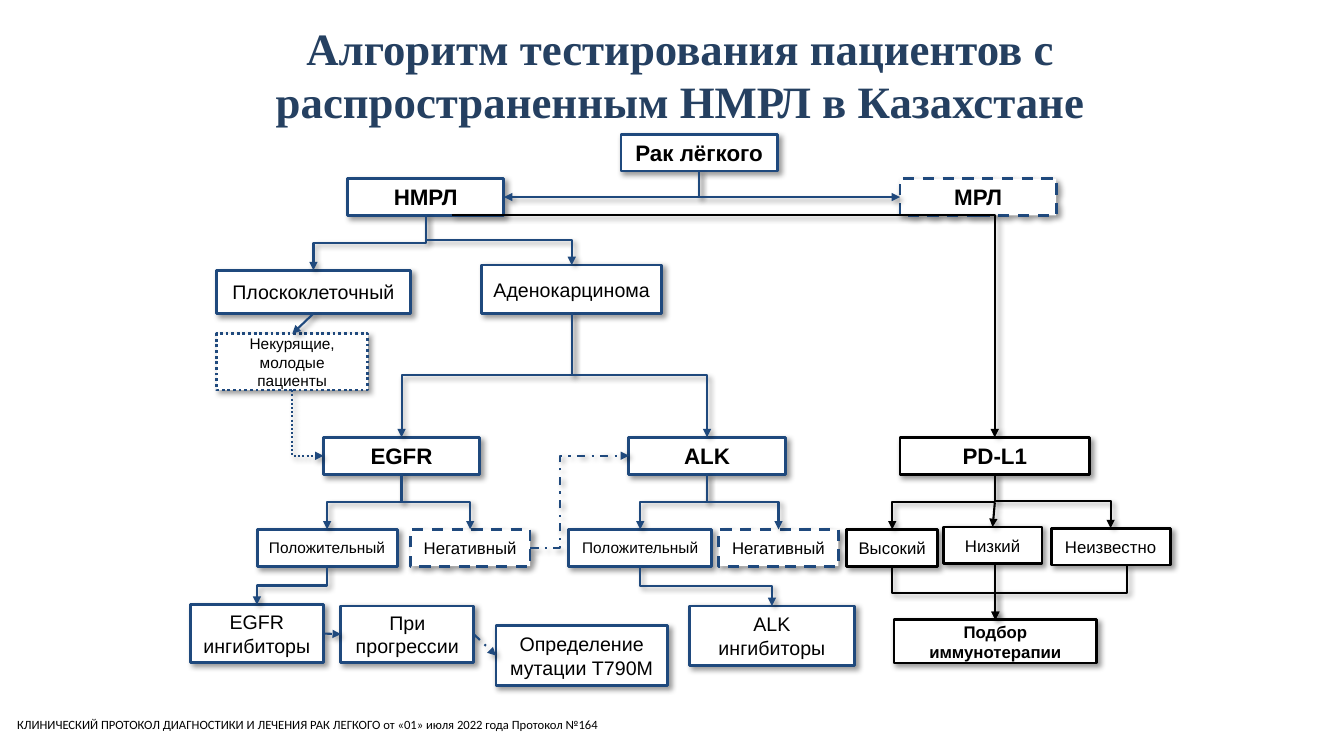
"""Build a slide with the testing flowchart for advanced lung cancer."""
from lxml.etree import SubElement
from pptx import Presentation
from pptx.dml.color import RGBColor
from pptx.enum.dml import MSO_LINE
from pptx.enum.shapes import MSO_CONNECTOR, MSO_SHAPE
from pptx.enum.text import MSO_ANCHOR, PP_ALIGN
from pptx.oxml.ns import qn
from pptx.util import Cm, Pt

HUES = {"title": "254061", "blue": "1F497D", "black": "000000", "white": "FFFFFF"}
DASH, DOT, MIX = MSO_LINE.DASH, MSO_LINE.ROUND_DOT, MSO_LINE.DASH_DOT


def write(shape, text, font, size, hue, bold, align, anchor):
    frame = shape.text_frame
    frame.text = text
    frame.word_wrap = True
    frame.vertical_anchor = anchor
    para = frame.paragraphs[0]
    para.alignment = align
    face = para.runs[0].font
    face.name, face.size, face.bold = font, Pt(size), bold
    face.color.rgb = RGBColor.from_string(HUES[hue])


def stroke(shape, hue, width, dash):
    shape.line.color.rgb = RGBColor.from_string(HUES[hue])
    shape.line.width = Pt(width)
    if dash:
        shape.line.dash_style = dash
    glow = SubElement(shape.element.spPr, qn("a:effectLst"))
    shade = SubElement(glow, qn("a:outerShdw"), blurRad=str(Pt(4)), dist=str(Pt(3)),
                       dir="2700000", algn="tl", rotWithShape="0")
    tint = SubElement(shade, qn("a:srgbClr"), val=HUES["black"])
    SubElement(tint, qn("a:alpha"), val="40000")


deck = Presentation()
deck.slide_width, deck.slide_height = Cm(33.87), Cm(19.05)
slide = deck.slides.add_slide(deck.slide_layouts[6])
shapes = slide.shapes

title = shapes.add_textbox(Cm(5.46), Cm(1.47), Cm(23.37), Cm(0.79))
write(title, "Алгоритм тестирования пациентов с распространенным НМРЛ в Казахстане",
      "Times New Roman", 32, "title", True, PP_ALIGN.CENTER, MSO_ANCHOR.MIDDLE)
note = shapes.add_textbox(Cm(0.18), Cm(17.93), Cm(26.57), Cm(0.64))
write(note, "КЛИНИЧЕСКИЙ ПРОТОКОЛ ДИАГНОСТИКИ И ЛЕЧЕНИЯ РАК ЛЕГКОГО от «01» июля 2022 года Протокол №164",
      "Calibri", 9, "black", False, PP_ALIGN.LEFT, MSO_ANCHOR.BOTTOM)

boxes = [
    ("root", "Рак лёгкого", 15.65, 3.38, 3.94, 0.93, 16, "blue", None),
    ("small", "МРЛ", 22.68, 4.5, 3.94, 0.93, 16, "blue", DASH),
    ("large", "НМРЛ", 8.76, 4.5, 3.94, 0.93, 16, "blue", None),
    ("adeno", "Аденокарцинома", 12.14, 6.68, 4.54, 1.22, 14, "blue", None),
    ("flat", "Плоскоклеточный", 5.46, 6.81, 4.88, 1.09, 14, "blue", None),
    ("young", "Некурящие, молодые пациенты", 5.46, 8.41, 3.81, 1.42, 11, "blue", DOT),
    ("egfr", "EGFR", 8.15, 11.02, 3.94, 0.93, 16, "blue", None),
    ("alk", "ALK", 15.85, 11.02, 3.94, 0.93, 16, "blue", None),
    ("pdl", "PD-L1", 22.68, 11.02, 4.78, 0.93, 16, "black", None),
    ("egfr+", "Положительный", 6.48, 13.34, 3.53, 0.93, 11, "blue", None),
    ("egfr-", "Негативный", 10.34, 13.34, 3.02, 0.93, 12, "blue", DASH),
    ("alk+", "Положительный", 14.33, 13.34, 3.61, 0.93, 11, "blue", None),
    ("alk-", "Негативный", 18.11, 13.34, 3.02, 0.93, 12, "blue", DASH),
    ("high", "Высокий", 21.34, 13.34, 2.29, 0.93, 12, "black", None),
    ("low", "Низкий", 23.77, 13.28, 2.49, 0.93, 12, "black", None),
    ("blind", "Неизвестно", 26.49, 13.31, 3, 0.93, 12, "black", None),
    ("block", "EGFR ингибиторы", 4.8, 15.24, 3.35, 1.45, 14, "blue", None),
    ("grow", "При прогрессии", 8.59, 15.27, 3.35, 1.42, 14, "blue", None),
    ("test", "Определение мутации Т790М", 12.5, 15.77, 4.32, 1.5, 14, "blue", None),
    ("stop", "ALK ингибиторы", 17.37, 15.27, 4.17, 1.5, 14, "blue", None),
    ("pick", "Подбор иммунотерапии", 22.53, 15.62, 5.11, 1.09, 12, "black", None),
]
spots = {"large edge": (11.38, 5.42), "fork": (25.07, 12.67),
         "blind edge": (28.4, 14.25), "low edge": (25.08, 14.18), "join": (25.08, 14.92)}
for name, text, x, y, wide, high, size, hue, dash in boxes:
    box = shapes.add_shape(MSO_SHAPE.RECTANGLE, Cm(x), Cm(y), Cm(wide), Cm(high))
    box.fill.solid()
    box.fill.fore_color.rgb = RGBColor.from_string(HUES["white"])
    stroke(box, hue, 2, dash)
    bold = size == 16 or name == "pick"
    write(box, text, "Arial", size, "black", bold, PP_ALIGN.CENTER, MSO_ANCHOR.MIDDLE)
    spots[name + " top"] = (x + wide / 2, y)
    spots[name + " base"] = (x + wide / 2, y + high)
    spots[name + " left"] = (x, y + high / 2)
    spots[name + " right"] = (x + wide, y + high / 2)

links = [
    ("root base", "large right", "down2", "blue", None),
    ("root base", "small left", "down2", "blue", None),
    ("large base", "flat top", "down3", "blue", None),
    ("large base", "adeno top", "down3", "blue", None),
    ("adeno base", "egfr top", "down3", "blue", None),
    ("adeno base", "alk top", "down3", "blue", None),
    ("flat base", "young top", "line", "blue", None),
    ("young base", "egfr left", "down2", "blue", DOT),
    ("egfr base", "egfr+ top", "down3", "blue", None),
    ("egfr base", "egfr- top", "down3", "blue", None),
    ("egfr- right", "alk left", "side3", "blue", MIX),
    ("alk base", "alk+ top", "down3", "blue", None),
    ("alk base", "alk- top", "down3", "blue", None),
    ("egfr+ base", "block top", "down3", "blue", None),
    ("alk+ base", "stop top", "down3", "blue", None),
    ("block right", "grow left", "line", "blue", MIX),
    ("grow right", "test left", "line", "blue", MIX),
    ("large edge", "pdl top", "side2", "black", None),
    ("pdl base", "high top", "down3", "black", None),
    ("pdl base", "blind top", "down3", "black", None),
    ("fork", "low top", "line", "black", None),
    ("high base", "pick top", "down3", "black", None),
    ("blind edge", "pick top", "down3", "black", None),
    ("low edge", "join", "line", "black", None),
]
for start, end, kind, hue, dash in links:
    (x1, y1), (x2, y2) = spots[start], spots[end]
    turn = 0
    if kind.startswith("down"):
        mid, half = (x1 + x2) / 2, (y2 - y1) / 2
        top, span = (y1 + y2) / 2, abs(x2 - x1) / 2
        turn, sign = (270, -1) if x2 > x1 else (90, 1)
        x1, x2 = mid - sign * half, mid + sign * half
        y1, y2 = top - span, top + span
    form = MSO_CONNECTOR.STRAIGHT if kind == "line" else MSO_CONNECTOR.ELBOW
    link = shapes.add_connector(form, Cm(x1), Cm(y1), Cm(x2), Cm(y2))
    link.rotation = turn
    stroke(link, hue, 1.5, dash)
    shape = link.element.spPr.find(qn("a:prstGeom"))
    if kind.endswith("2"):
        shape.set("prst", "bentConnector2")
    if kind == "side3":
        SubElement(shape.find(qn("a:avLst")), qn("a:gd"), name="adj1", fmla="val 30300")
    if end != "join":
        SubElement(link.element.spPr.find(qn("a:ln")), qn("a:tailEnd"), type="triangle")

deck.save("out.pptx")
